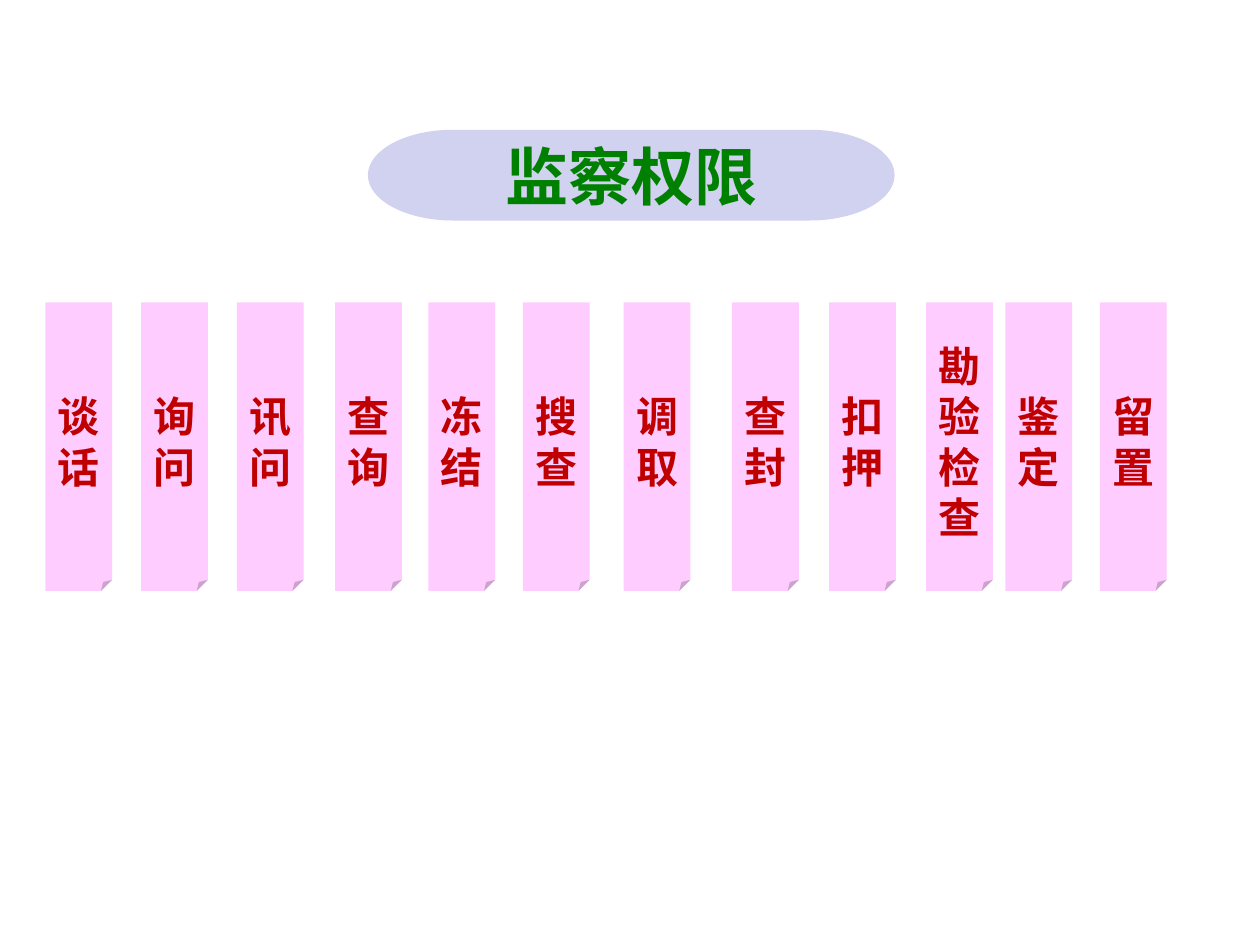
from pptx import Presentation
from pptx.dml.color import RGBColor
from pptx.enum import shapes, text
from pptx.util import Inches, Pt

LILAC = RGBColor(0xD1, 0xD1, 0xF0)
PINK = RGBColor(0xFF, 0xCC, 0xFF)
GREEN = RGBColor(0x00, 0x80, 0x00)
RED = RGBColor(0xC0, 0x00, 0x00)

# Each power with its offset from the left edge of the row
POWERS = [
    ("谈话", 0), ("询问", 0.76), ("讯问", 1.52), ("查询", 2.3),
    ("冻结", 3.04), ("搜查", 3.79), ("调取", 4.59), ("查封", 5.45),
    ("扣押", 6.22), ("勘验检查", 6.99), ("鉴定", 7.62), ("留置", 8.37),
]
CARD_W = 0.53


def write(shape, words, size, color, font="Arial", bold=True):
    frame = shape.text_frame
    frame.word_wrap = True
    frame.vertical_anchor = text.MSO_ANCHOR.MIDDLE
    para = frame.paragraphs[0]
    para.alignment = text.PP_ALIGN.CENTER
    run = para.add_run()
    run.text = words
    run.font.name = font
    run.font.size = Pt(size)
    run.font.bold = bold
    run.font.color.rgb = color


def block(slide, kind, box, fill):
    shape = slide.shapes.add_shape(kind, *(Inches(n) for n in box))
    shape.shadow.inherit = False
    shape.fill.solid()
    shape.fill.fore_color.rgb = fill
    shape.line.fill.background()
    return shape


def title(slide, box):
    pill = block(slide, shapes.MSO_SHAPE.FLOWCHART_TERMINATOR, box, LILAC)
    write(pill, "监察权限", size=36, color=GREEN)


def cards(slide, box):
    left, top, _, height = box
    for name, shift in POWERS:
        # The narrow card wraps its words to one character a line
        card = block(slide, shapes.MSO_SHAPE.FOLDED_CORNER,
                     (left + shift, top, CARD_W, height), PINK)
        write(card, name, size=24, color=RED)


def main():
    deck = Presentation()
    deck.slide_width, deck.slide_height = Inches(10), Inches(7.5)
    slide = deck.slides.add_slide(deck.slide_layouts[6])
    title(slide, (2.92, 1.03, 4.18, 0.72))
    cards(slide, (0.36, 2.4, 8.9, 2.29))
    deck.save("out.pptx")


if __name__ == "__main__":
    main()
